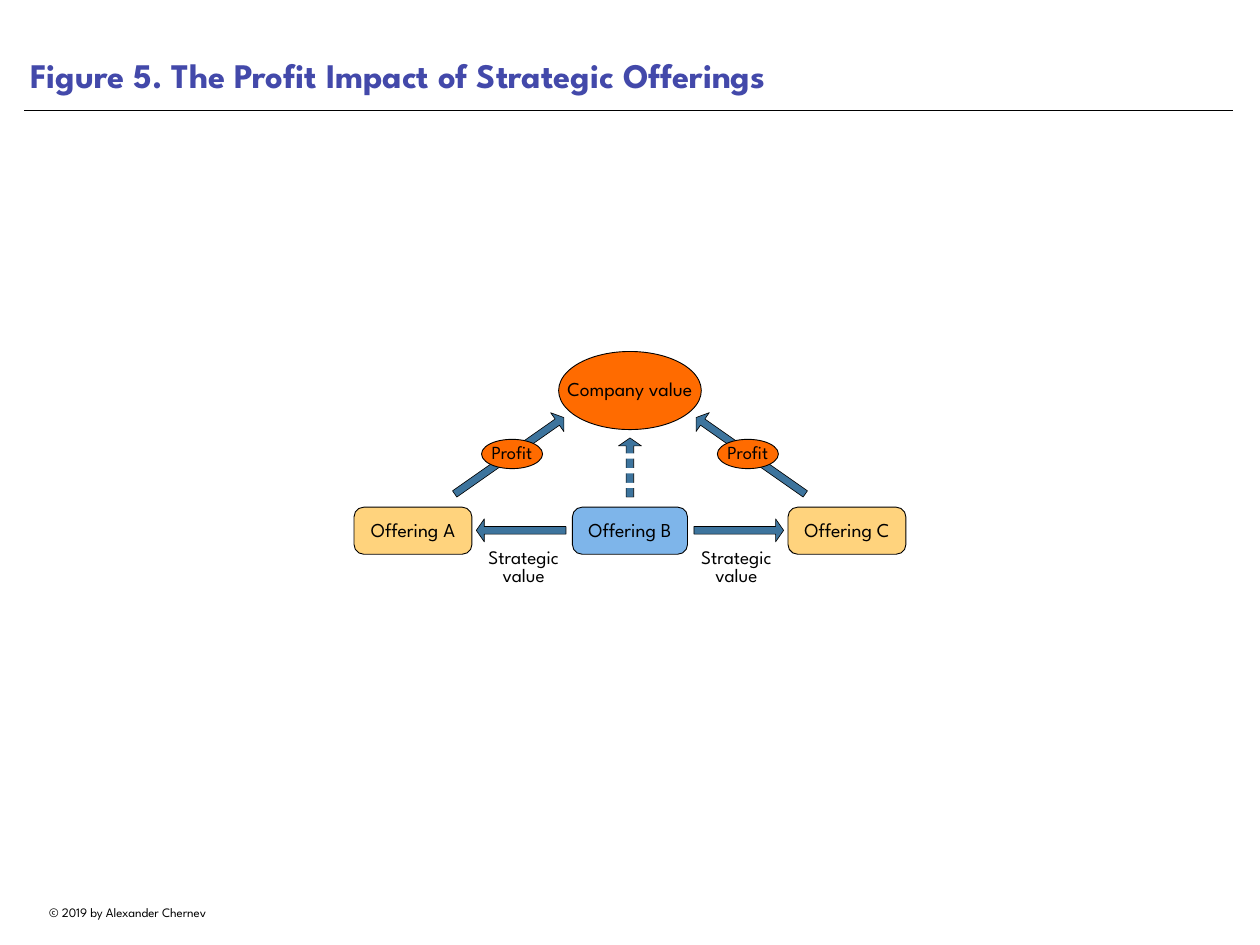
from lxml.etree import SubElement
from pptx import Presentation
from pptx.dml.color import RGBColor
from pptx.enum.shapes import MSO_CONNECTOR, MSO_SHAPE
from pptx.enum.text import MSO_ANCHOR, PP_ALIGN
from pptx.oxml.ns import qn
from pptx.util import Cm, Pt

# Content
TITLE = "Figure 5. The Profit Impact of Strategic Offerings"
CREDIT = "© 2019 by Alexander Chernev"
GOAL = "Company value"
GAIN = "Profit"
LINK = "Strategic value"
OFFERINGS = [("Offering A", 3.38, "sand"), ("Offering B", 3.3, "blue"),
             ("Offering C", 3.38, "sand")]

# Look
COLORS = {"title": "4349AA", "text": "000000", "orange": "FF6B00", "sand": "FFD37D",
          "blue": "7EB5EA", "arrow": "3D749D", "white": "FFFFFF"}
FONT = "League Spartan"
ARROW_ADJUSTMENTS = (0.329, 0.347)

# Layout in centimetres
CENTER_X = 18.06
OFFERING_STEP, OFFERING_Y = 6.22, 15.22
PROFIT_STEP, PROFIT_Y = 3.38, 13.02
SLOPE_STEP, SLOPE_Y = 3.46, 13.07
LINK_STEP, LINK_Y = 3.12, 15.21
LABEL_STEP, LABEL_Y = 3.05, 16.42
ARROW_WIDTH = 0.66
GAP_COUNT, GAP_TOP, GAP_STEP = 4, 13.08, 0.42
SIDES = (-1, 1)

presentation = Presentation()
presentation.slide_width, presentation.slide_height = Cm(36.12), Cm(27.1)
slide = presentation.slides.add_slide(presentation.slide_layouts[5])


def rgb(name):
    return RGBColor.from_string(COLORS[name])


def write(shape, text, size, spacing=1.0, color="text", bold=False,
          align=PP_ALIGN.CENTER, anchor=MSO_ANCHOR.MIDDLE, wrap=True, margin=0.0):
    frame = shape.text_frame
    frame.text = text
    paragraph = frame.paragraphs[0]
    frame_format = {"word_wrap": wrap, "vertical_anchor": anchor}
    for side in ("left", "right", "top", "bottom"):
        frame_format[f"margin_{side}"] = Cm(margin)
    formats = [
        (frame, frame_format),
        (paragraph, {"alignment": align, "line_spacing": spacing}),
        (paragraph.runs[0].font, {"name": FONT, "size": Pt(size), "bold": bold}),
    ]
    for target, values in formats:
        for name, value in values.items():
            setattr(target, name, value)
    paragraph.runs[0].font.color.rgb = rgb(color)


def add_centered(kind, x, y, width, height, fill, line=None, rotation=0, adjustments=()):
    """Add a preset shape around its centre point."""
    shape = slide.shapes.add_shape(kind, Cm(x - width / 2), Cm(y - height / 2),
                                   Cm(width), Cm(height))
    shape.shadow.inherit = False
    shape.rotation = rotation
    for index, value in enumerate(adjustments):
        shape.adjustments[index] = value
    shape.fill.solid()
    shape.fill.fore_color.rgb = rgb(fill)
    if line:
        shape.line.color.rgb = rgb("text")
        shape.line.width = Pt(line)
    else:
        shape.line.fill.background()
    return shape


def add_arrow(kind, x, y, width, height, rotation=0):
    return add_centered(kind, x, y, width, height, "arrow", 0.5, rotation, ARROW_ADJUSTMENTS)


# Title, rule and credit
title = slide.shapes.title
for name, value in {"left": 0.69, "top": 0, "width": 34.65, "height": 2.92}.items():
    setattr(title, name, Cm(value))
write(title, TITLE, 28, color="title", bold=True, align=PP_ALIGN.LEFT,
      anchor=MSO_ANCHOR.BOTTOM, margin=0.18)

rule = slide.shapes.add_connector(MSO_CONNECTOR.STRAIGHT, Cm(0.69), Cm(3.15),
                                  Cm(35.36), Cm(3.15))
rule.line.color.rgb = rgb("text")
rule.line.width = Pt(0.5)
SubElement(rule._element.spPr, qn("a:effectLst"))

credit = slide.shapes.add_textbox(Cm(0.69), Cm(25.81), Cm(5.94), Cm(0.71))
write(credit, CREDIT, 10.5, wrap=False)

# Strategic value labels
for side in SIDES:
    label = add_centered(MSO_SHAPE.RECTANGLE, CENTER_X + side * LABEL_STEP, LABEL_Y,
                         3.33, 1.3, "white")
    write(label, LINK, 15.5, spacing=0.8, anchor=MSO_ANCHOR.TOP)

# Company value
goal = add_centered(MSO_SHAPE.OVAL, CENTER_X, 11.2, 4.09, 2.24, "orange", 0.75)
write(goal, GOAL, 16, spacing=0.8, wrap=False)

# Offerings
for position, (name, width, fill) in enumerate(OFFERINGS, start=-1):
    box = add_centered(MSO_SHAPE.ROUNDED_RECTANGLE, CENTER_X + position * OFFERING_STEP,
                       OFFERING_Y, width, 1.35, fill, 0.75, adjustments=(0.206,))
    write(box, name, 16, spacing=0.9, margin=0.1)

# Arrows to the side offerings and from them to the company
for side in SIDES:
    outward, inward = MSO_SHAPE.RIGHT_ARROW, MSO_SHAPE.LEFT_ARROW
    if side < 0:
        outward, inward = inward, outward
    add_arrow(outward, CENTER_X + side * LINK_STEP, LINK_Y, 2.57, ARROW_WIDTH)
    add_arrow(inward, CENTER_X + side * SLOPE_STEP, SLOPE_Y, 3.82, ARROW_WIDTH,
              rotation=side * 35 % 360)
    profit = add_centered(MSO_SHAPE.OVAL, CENTER_X + side * PROFIT_STEP, PROFIT_Y,
                          1.75, 0.84, "orange", 0.75)
    write(profit, GAIN, 15, spacing=0.8, wrap=False)

# Dashed arrow from the middle offering
add_arrow(MSO_SHAPE.UP_ARROW, CENTER_X, 13.41, ARROW_WIDTH, 1.7)
for index in range(GAP_COUNT):
    add_centered(MSO_SHAPE.RECTANGLE, CENTER_X, GAP_TOP + index * GAP_STEP,
                 1.47, 0.15, "white")

presentation.save("out.pptx")
